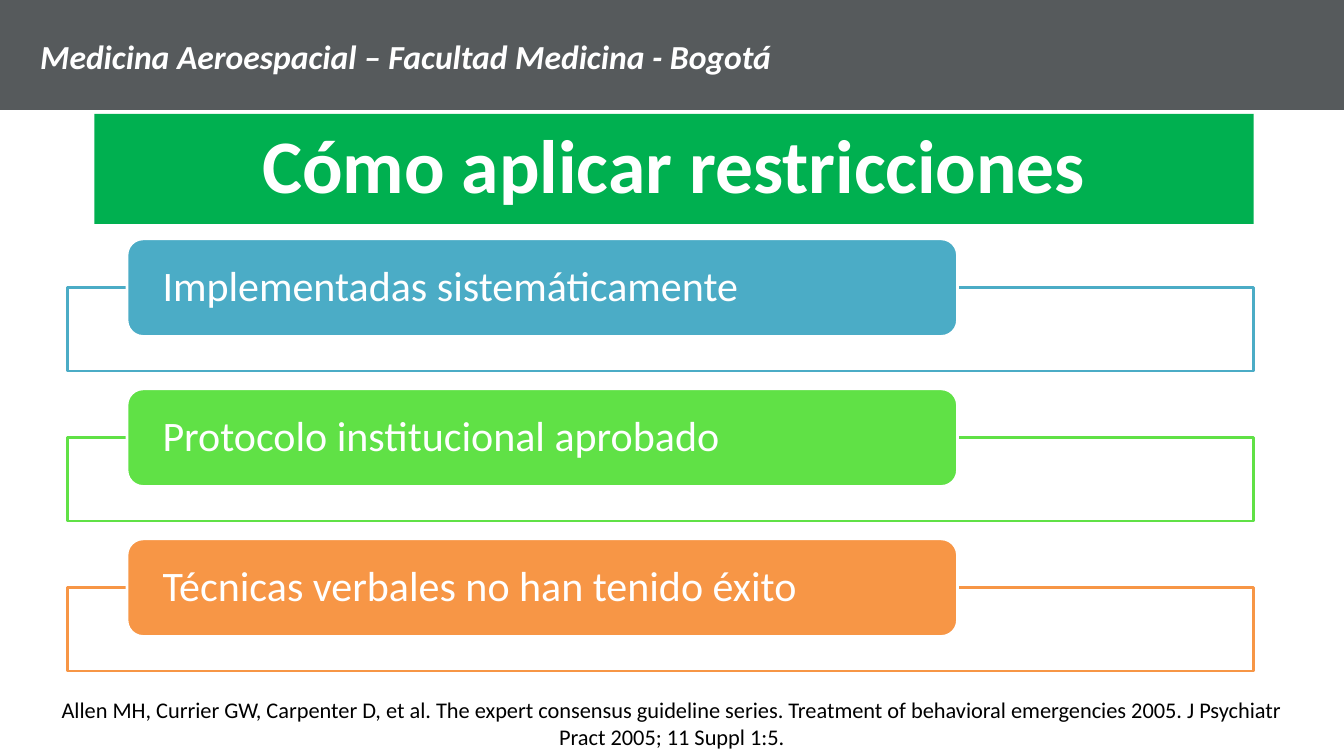
from pptx import Presentation
from pptx.dml.color import RGBColor
from pptx.enum.shapes import MSO_SHAPE as SHAPE
from pptx.enum.text import MSO_ANCHOR as ANCHOR, MSO_AUTO_SIZE as AUTO, PP_ALIGN as ALIGN
from pptx.util import Pt

HEADER = "Medicina Aeroespacial – Facultad Medicina - Bogotá"
TITLE = "Cómo aplicar restricciones"
RULES = [
    ("Implementadas sistemáticamente", "4BACC6"),
    ("Protocolo institucional aprobado", "60E146"),
    ("Técnicas verbales no han tenido éxito", "F79646"),
]
REFERENCE = (
    "Allen MH, Currier GW, Carpenter D, et al. The expert consensus guideline series. "
    "Treatment of behavioral emergencies 2005. J Psychiatr Pract 2005; 11 Suppl 1:5."
)
WHITE = "FFFFFF"
FRAME = (48.2, 205.2, 847.4, 59.8)
PILL = (90.7, 170.6, 593.3, 69.8)
STEP = 107.15


def rgb(value):
    return RGBColor.from_string(value)


def add_box(s, kind, box, fill, line=None):
    sp = s.shapes.add_shape(kind, *map(Pt, box))
    sp.shadow.inherit = False
    sp.fill.solid()
    sp.fill.fore_color.rgb = rgb(fill)
    if line:
        sp.line.color.rgb = rgb(line)
        sp.line.width = Pt(2)
    else:
        sp.line.fill.background()
    return sp


def write(sp, text, size, color=WHITE, align=ALIGN.LEFT, anchor=ANCHOR.MIDDLE,
          bold=False, italic=False, spacing=1.0, wrap=True):
    tf = sp.text_frame
    tf.auto_size = AUTO.NONE
    tf.word_wrap = wrap
    tf.vertical_anchor = anchor
    p = tf.paragraphs[0]
    p.alignment = align
    p.line_spacing = spacing
    r = p.add_run()
    r.text = text
    r.font.name = "Calibri"
    r.font.size = Pt(size)
    r.font.bold = bold
    r.font.italic = italic
    r.font.color.rgb = rgb(color)


def shift(box, offset):
    left, top, width, height = box
    return left, top + offset, width, height


prs = Presentation()
prs.slide_width, prs.slide_height = Pt(960), Pt(540)
s = prs.slides.add_slide(prs.slide_layouts[5])

add_box(s, SHAPE.RECTANGLE, (0, 0, 960, 78.5), "565A5C")

for i, (rule, color) in enumerate(RULES):
    add_box(s, SHAPE.RECTANGLE, shift(FRAME, i * STEP), WHITE, color)
    pill = add_box(s, SHAPE.ROUNDED_RECTANGLE, shift(PILL, i * STEP), color, WHITE)
    pill.text_frame.margin_left = pill.text_frame.margin_right = Pt(22)
    pill.text_frame.margin_top = pill.text_frame.margin_bottom = 0
    write(pill, rule, 30, spacing=0.9)

title = s.shapes.title
title.left, title.top, title.width, title.height = map(Pt, (67.5, 81.4, 828, 78.5))
title.fill.solid()
title.fill.fore_color.rgb = rgb("00B050")
write(title, TITLE, 54, align=ALIGN.CENTER, bold=True, spacing=0.9)

header = s.shapes.add_textbox(*map(Pt, (21.6, 22.3, 540.7, 36)))
write(header, HEADER, 24, anchor=ANCHOR.TOP, bold=True, italic=True, wrap=False)

reference = s.shapes.add_textbox(*map(Pt, (34.6, 493.9, 890.6, 46)))
write(reference, REFERENCE, 16, "000000", ALIGN.CENTER, ANCHOR.TOP)

prs.save("out.pptx")
